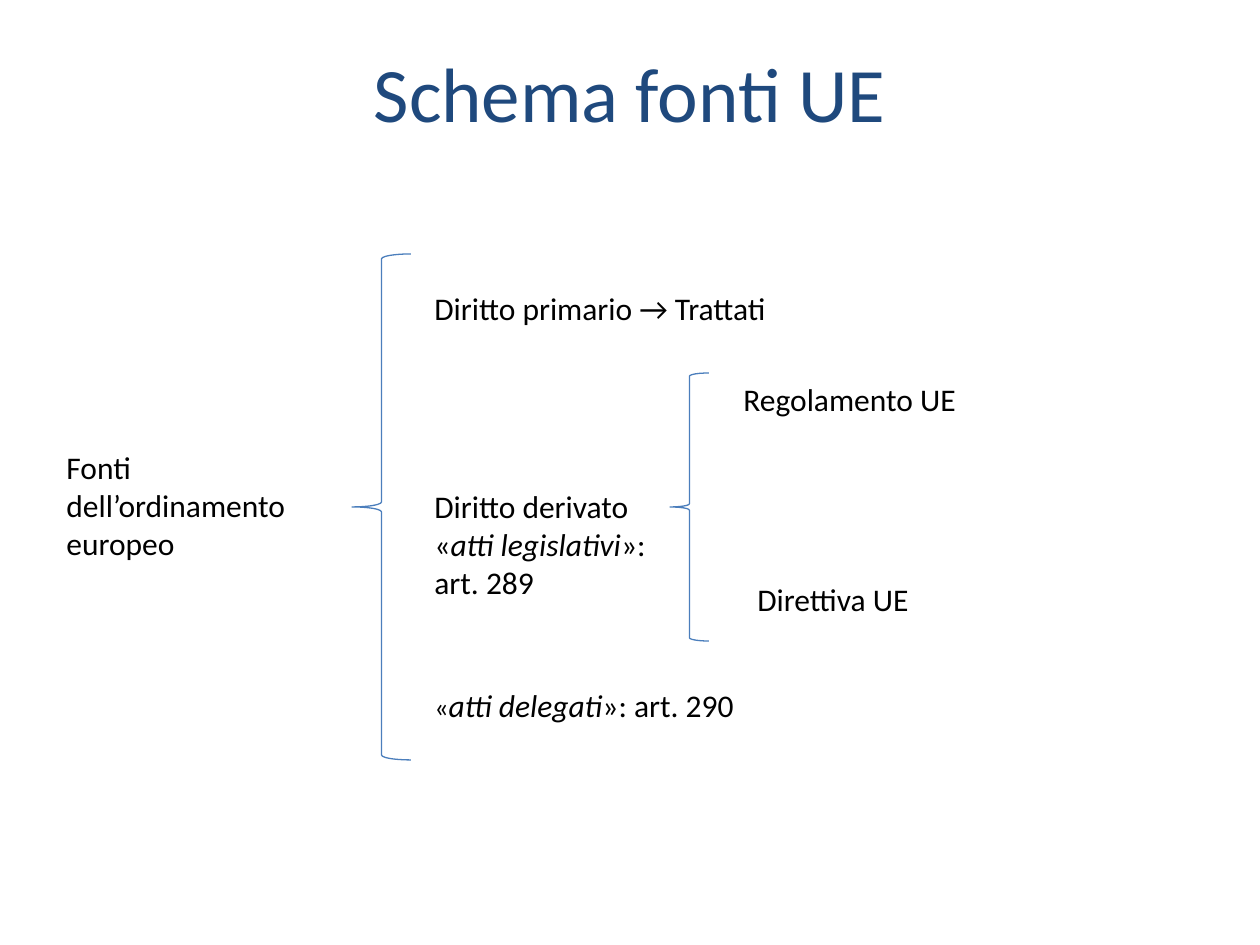
from pptx import Presentation
from pptx.dml.color import RGBColor
from pptx.enum.shapes import MSO_SHAPE
from pptx.enum.text import MSO_ANCHOR, MSO_AUTO_SIZE, PP_ALIGN
from pptx.util import Pt

PX = 914400 / 126
FONT = "Calibri"
NAVY = RGBColor(0x1F, 0x49, 0x7D)
BLUE = RGBColor(0x4B, 0x7E, 0xBC)
BLACK = RGBColor(0, 0, 0)
LINE_HEIGHT = 38
MARGINS = 12


def emu(*lengths):
    """Turn px lengths into EMU."""
    return [round(length * PX) for length in lengths]


def add_text(slide, box, paragraphs, size=18, color=BLACK):
    """Add a text box; each paragraph is a list of (text, italic, size) runs."""
    shape = slide.shapes.add_textbox(*emu(*box))
    frame = shape.text_frame
    frame.word_wrap = True
    for index, runs in enumerate(paragraphs):
        paragraph = frame.add_paragraph() if index else frame.paragraphs[0]
        paragraph.font.name = FONT
        paragraph.font.size = Pt(size)
        paragraph.font.color.rgb = color
        for text, italic, run_size in runs:
            run = paragraph.add_run()
            run.text = text
            if italic:
                run.font.italic = True
            if run_size:
                run.font.size = Pt(run_size)
    return frame


def plain(text):
    """Return a paragraph of one upright run."""
    return [(text, False, None)]


def quoted(name, ending, quote_size=None):
    """Return a paragraph with an italic name between guillemets."""
    return [("«", False, quote_size), (name, True, None), ("»" + ending, False, None)]


def add_label(slide, left, top, width, paragraphs, lines=1):
    """Add a label whose height follows its number of lines."""
    box = (left, top, width, lines * LINE_HEIGHT + MARGINS)
    frame = add_text(slide, box, paragraphs)
    frame.auto_size = MSO_AUTO_SIZE.SHAPE_TO_FIT_TEXT


def add_brace(slide, box):
    """Add a thin left brace."""
    shape = slide.shapes.add_shape(MSO_SHAPE.LEFT_BRACE, *emu(*box))
    shape.shadow.inherit = False
    shape.fill.background()
    shape.line.color.rgb = BLUE
    shape.line.width = Pt(0.75)


def add_title(slide, box):
    """Add the centred slide title."""
    frame = add_text(slide, box, [plain("Schema fonti UE")], 44, NAVY)
    frame.vertical_anchor = MSO_ANCHOR.MIDDLE
    frame.paragraphs[0].alignment = PP_ALIGN.CENTER


def add_sources(slide, left, top):
    """Add the root label, its brace and the three kinds of source."""
    add_label(slide, left, top + 188, 258, [plain("Fonti dell’ordinamento europeo")], 3)
    add_brace(slide, (left + 298, top, 59, 506))
    branch = left + 368
    add_label(slide, branch, top + 29, 436, [plain("Diritto primario → Trattati")])
    derived = [plain("Diritto derivato"), quoted("atti legislativi", ":"), plain("art. 289")]
    add_label(slide, branch, top + 227, 258, derived, 3)
    add_label(slide, branch, top + 426, 436, [quoted("atti delegati", ": art. 290", 16)])


def add_legislative_acts(slide, left, top):
    """Add the brace and the two kinds of legislative act."""
    add_brace(slide, (left, top, 39, 268))
    add_label(slide, left + 61, top + 1, 248, [plain("Regolamento UE")])
    add_label(slide, left + 75, top + 201, 228, [plain("Direttiva UE")])


def main():
    """Build and save the slide."""
    presentation = Presentation()
    presentation.slide_width, presentation.slide_height = emu(1260, 945)
    slide = presentation.slides.add_slide(presentation.slide_layouts[6])
    add_title(slide, (63, 38, 1134, 107))
    add_sources(slide, 54, 254)
    add_legislative_acts(slide, 670, 373)
    presentation.save("out.pptx")


if __name__ == "__main__":
    main()
